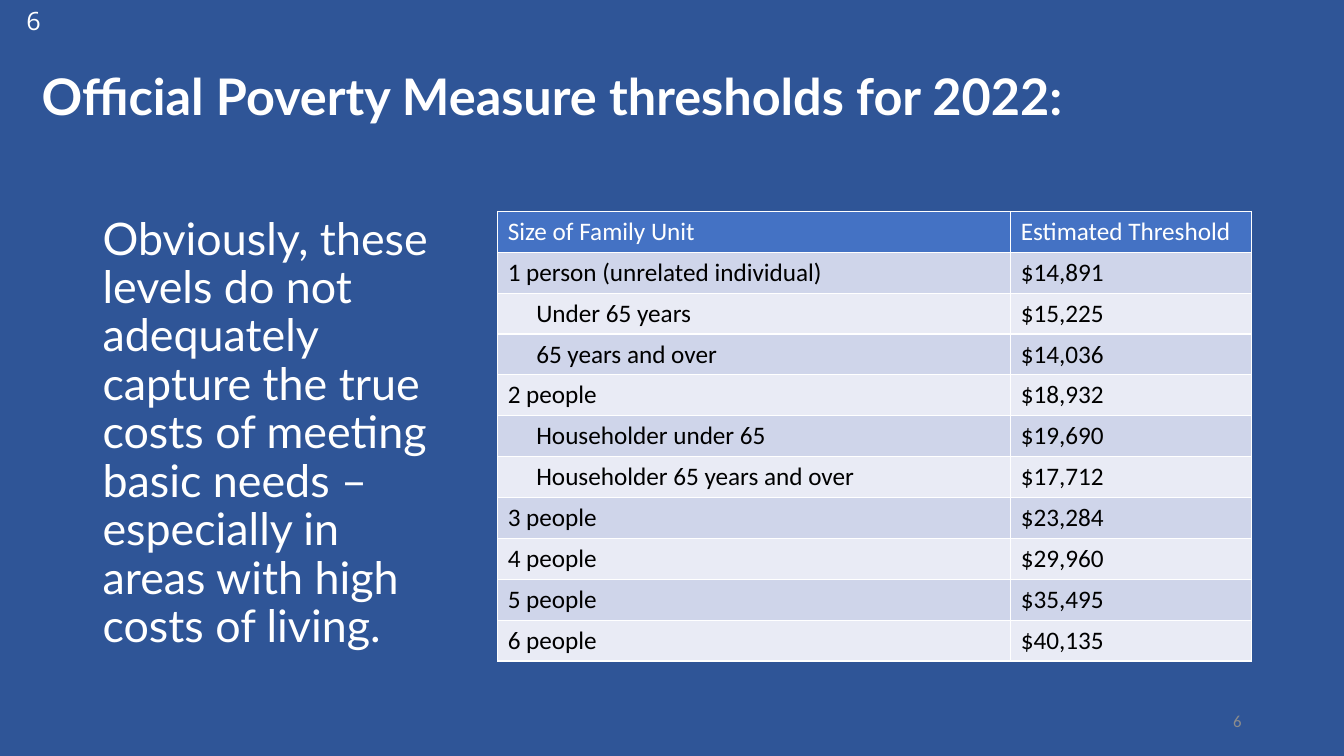
from lxml import etree
from pptx import Presentation
from pptx.dml.color import RGBColor
from pptx.enum import text as t
from pptx.oxml import ns
from pptx.util import Pt

NAVY = RGBColor(0x2F, 0x55, 0x97)
BLUE = RGBColor(0x44, 0x72, 0xC4)
LAVENDER = RGBColor(0xCF, 0xD5, 0xEA)
PALE = RGBColor(0xE9, 0xEB, 0xF5)
GRAY = RGBColor(0x8C, 0x8C, 0x8C)
WHITE = RGBColor(0xFF, 0xFF, 0xFF)
BLACK = RGBColor(0, 0, 0)

THRESHOLDS = [
    ("Size of Family Unit", "Estimated Threshold", False),
    ("1 person (unrelated individual)", "$14,891", False),
    ("Under 65 years", "$15,225", True),
    ("65 years and over", "$14,036", True),
    ("2 people", "$18,932", False),
    ("Householder under 65", "$19,690", True),
    ("Householder 65 years and over", "$17,712", True),
    ("3 people", "$23,284", False),
    ("4 people", "$29,960", False),
    ("5 people", "$35,495", False),
    ("6 people", "$40,135", False),
]


class SlideBuilder:
    heading_font = "Lato"
    table_font = "Calibri"
    indent = 20.4
    cell_margin = 7.2

    def __init__(self, deck):
        self.slide = deck.slides.add_slide(deck.slide_layouts[5])
        fill = self.slide.background.fill
        fill.solid()
        fill.fore_color.rgb = NAVY

    def set_text(self, frame, wording, font, size, color, bold=False,
                 align=t.PP_ALIGN.LEFT, spacing=None):
        frame.text = wording
        para = frame.paragraphs[0]
        para.alignment = align
        if spacing:
            para.line_spacing = spacing
        span = para.runs[0]
        span.font.name = font
        span.font.size = Pt(size)
        span.font.bold = bold
        span.font.color.rgb = color

    def title(self, wording, left, top, width, height):
        box = self.slide.shapes.title
        box.left, box.top, box.width, box.height = map(Pt, (left, top, width, height))
        frame = box.text_frame
        frame.auto_size = t.MSO_AUTO_SIZE.NONE
        frame.vertical_anchor = t.MSO_ANCHOR.MIDDLE
        self.set_text(frame, wording, self.heading_font, 36, WHITE, bold=True, spacing=0.9)

    def text(self, wording, left, top, width, height, font, size, color,
             anchor=t.MSO_ANCHOR.MIDDLE, **style):
        box = self.slide.shapes.add_textbox(*map(Pt, (left, top, width, height)))
        frame = box.text_frame
        frame.word_wrap = True
        frame.vertical_anchor = anchor
        self.set_text(frame, wording, font, size, color, **style)

    def borders(self, cell):
        properties = cell._tc.get_or_add_tcPr()
        for side in ("lnL", "lnR", "lnT", "lnB"):
            line = etree.SubElement(properties, ns.qn(f"a:{side}"), w=str(Pt(1)))
            solid = etree.SubElement(line, ns.qn("a:solidFill"))
            etree.SubElement(solid, ns.qn("a:srgbClr"), val=str(WHITE))

    def table(self, rows, left, top, widths, row_height):
        frame = self.slide.shapes.add_table(
            len(rows), len(widths), Pt(left), Pt(top),
            Pt(sum(widths)), Pt(row_height * len(rows)))
        grid = frame.table
        for column, width in zip(grid.columns, widths):
            column.width = Pt(width)
        for index, (family, threshold, indented) in enumerate(rows):
            grid.rows[index].height = Pt(row_height)
            fill = BLUE if index == 0 else (LAVENDER if index % 2 else PALE)
            color = WHITE if index == 0 else BLACK
            for cell, wording in zip(grid.rows[index].cells, (family, threshold)):
                self.borders(cell)
                cell.fill.solid()
                cell.fill.fore_color.rgb = fill
                self.set_text(cell.text_frame, wording, self.table_font, 18, color)
            if indented:
                grid.cell(index, 0).margin_left = Pt(self.cell_margin + self.indent)


def main():
    deck = Presentation()
    deck.slide_width, deck.slide_height = Pt(960), Pt(540)
    page = SlideBuilder(deck)
    page.title("Official Poverty Measure thresholds for 2022:", 22.5, 18.5, 871, 104.5)
    page.text("Obviously, these levels do not adequately capture the true costs of "
              "meeting basic needs – especially in areas with high costs of living.",
              66.2, 151, 263, 312, "Lato", 32, WHITE,
              anchor=t.MSO_ANCHOR.TOP, spacing=0.9)
    page.text("6", 678, 500.5, 216, 28.75, "Calibri", 12, GRAY, align=t.PP_ALIGN.RIGHT)
    page.table(THRESHOLDS, 355.5, 151, (366.5, 172), 29.2)
    page.text("6", 0, 0, 48, 29, "Open Sans", 18, WHITE, align=t.PP_ALIGN.CENTER)
    deck.save("out.pptx")


if __name__ == "__main__":
    main()
